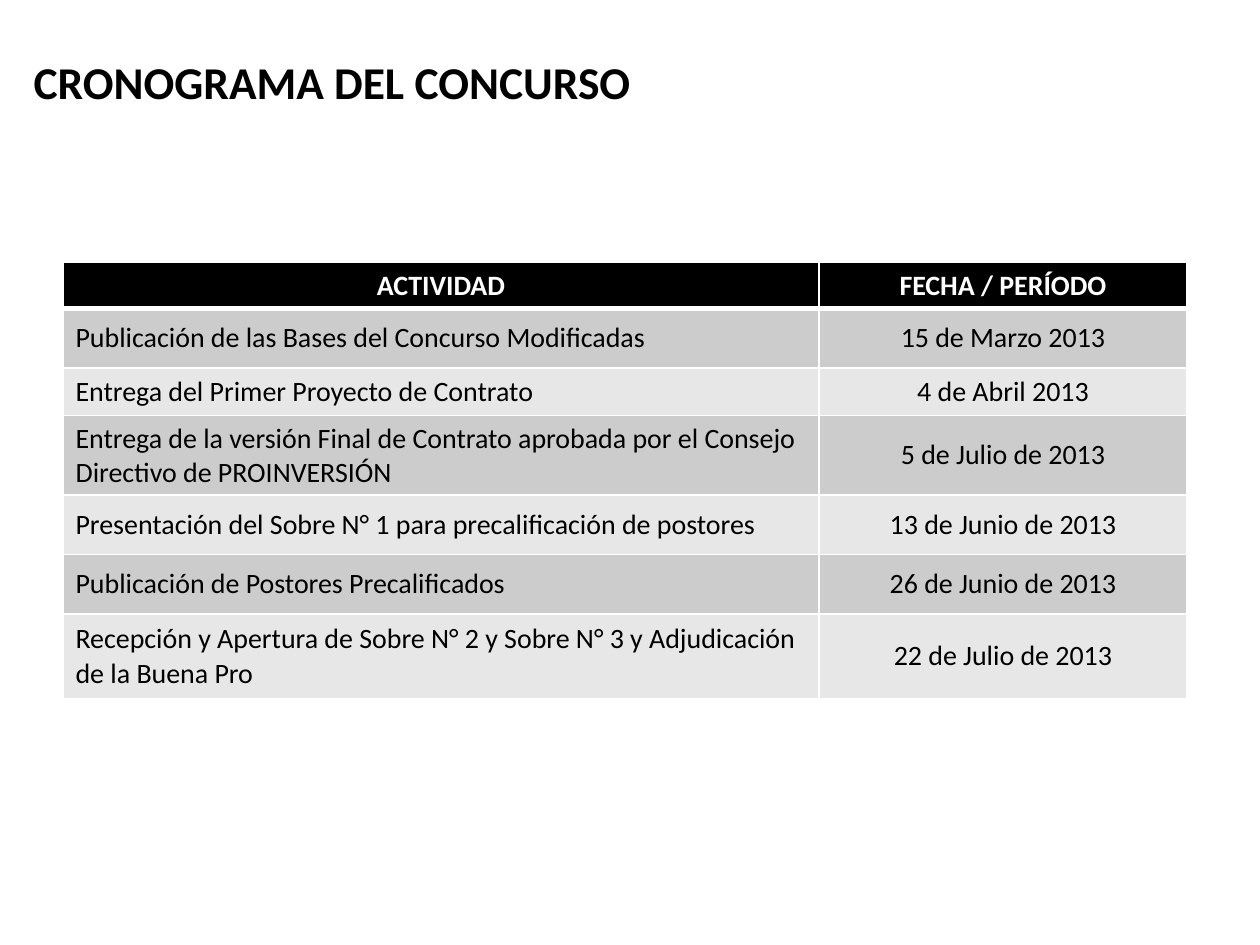
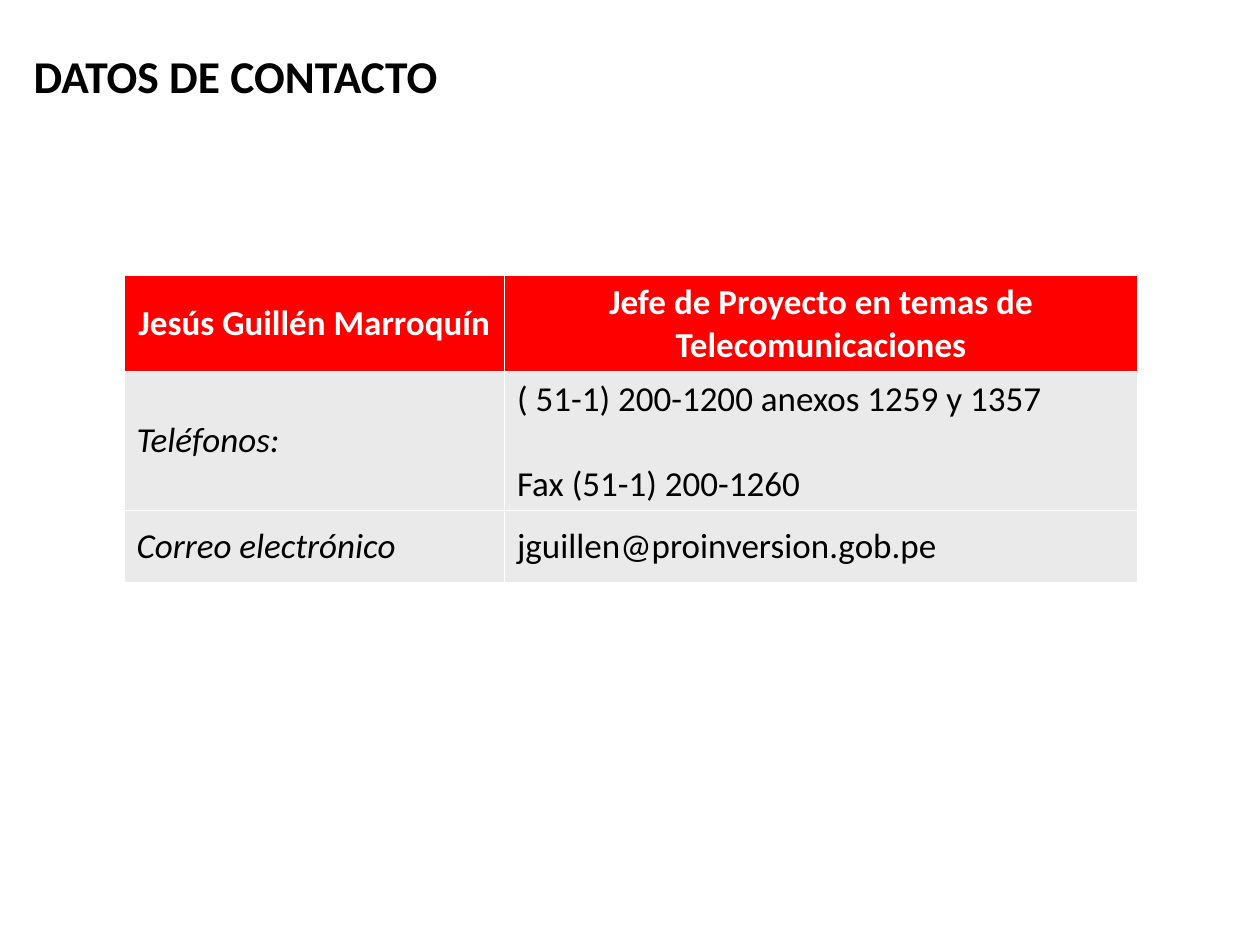
"""Build the contest schedule slide and the contact details slide."""
from dataclasses import dataclass

from lxml.etree import SubElement
from pptx import Presentation
from pptx.dml.color import RGBColor as Color
from pptx.enum.text import MSO_ANCHOR as Anchor, MSO_AUTO_SIZE as AutoSize, PP_ALIGN as Align
from pptx.oxml.ns import qn
from pptx.util import Cm, Pt


@dataclass(frozen=True)
class Theme:
    font: str = "Calibri"
    black: str = "000000"
    white: str = "FFFFFF"
    red: str = "FF0000"
    dark_band: str = "CCCCCC"
    light_band: str = "E7E7E7"
    contact_band: str = "EAEAEA"
    title_size: int = 26
    schedule_size: int = 16
    contact_size: int = 20
    rule: int = 1
    heavy_rule: int = 3


theme = Theme()


def write_text(frame, text, size, color=theme.black, bold=False, italic=False,
               align=Align.LEFT, gap=0):
    frame.word_wrap = True
    for index, line in enumerate(text.split("\n")):
        paragraph = frame.add_paragraph() if index else frame.paragraphs[0]
        paragraph.alignment = align
        if index:
            paragraph.space_before = Pt(gap)
        run = paragraph.add_run()
        run.text = line
        run.font.name = theme.font
        run.font.size = Pt(size)
        run.font.bold = bold
        run.font.italic = italic
        run.font.color.rgb = Color.from_string(color)


def draw_borders(cell, bottom_width):
    properties = cell._tc.get_or_add_tcPr()
    for side in ("lnL", "lnR", "lnT", "lnB"):
        width = bottom_width if side == "lnB" else theme.rule
        line = SubElement(properties, qn(f"a:{side}"), w=str(Pt(width)))
        fill = SubElement(line, qn("a:solidFill"))
        SubElement(fill, qn("a:srgbClr"), val=theme.white)


schedule = dict(
    title="CRONOGRAMA DEL CONCURSO", title_top=0.97,
    left=1.27, top=5.29, columns=(15.24, 7.42),
    heights=(0.91, 1.2, 0.95, 1.6, 1.2, 1.2, 1.7),
    size=theme.schedule_size, header=theme.black, header_rule=theme.heavy_rule,
    bands=(theme.dark_band, theme.light_band),
    value_align=Align.CENTER, italic_labels=False,
    rows=(
        ("ACTIVIDAD", "FECHA / PERÍODO"),
        ("Publicación de las Bases del Concurso Modificadas", "15 de Marzo 2013"),
        ("Entrega del Primer Proyecto de Contrato", "4 de Abril 2013"),
        ("Entrega de la versión Final de Contrato aprobada por el Consejo "
         "Directivo de PROINVERSIÓN", "5 de Julio de 2013"),
        ("Presentación del Sobre N° 1 para precalificación de postores",
         "13 de Junio de 2013"),
        ("Publicación de Postores Precalificados", "26 de Junio de 2013"),
        ("Recepción y Apertura de Sobre N° 2 y Sobre N° 3 y Adjudicación "
         "de la Buena Pro", "22 de Julio de 2013"),
    ),
)
contact = dict(
    title="DATOS DE CONTACTO", title_top=0.84,
    left=2.5, top=5.54, columns=(7.67, 12.76), heights=(1.94, 2.8, 1.45),
    size=theme.contact_size, header=theme.red, header_rule=theme.rule,
    bands=(theme.contact_band,),
    value_align=Align.LEFT, italic_labels=True,
    rows=(
        ("Jesús Guillén Marroquín", "Jefe de Proyecto en temas de Telecomunicaciones"),
        ("Teléfonos:", "( 51-1) 200-1200 anexos 1259 y 1357\nFax (51-1) 200-1260"),
        ("Correo electrónico", "jguillen@proinversion.gob.pe"),
    ),
)

presentation = Presentation()
presentation.slide_width = Cm(25.4)
presentation.slide_height = Cm(19.05)

for page in (schedule, contact):
    slide = presentation.slides.add_slide(presentation.slide_layouts[6])
    title = slide.shapes.add_textbox(Cm(0.43), Cm(page["title_top"]), Cm(15.67), Cm(1.37))
    write_text(title.text_frame, page["title"], theme.title_size, bold=True)
    title.text_frame.auto_size = AutoSize.SHAPE_TO_FIT_TEXT

    rows, columns, heights = page["rows"], page["columns"], page["heights"]
    table = slide.shapes.add_table(
        len(rows), len(columns), Cm(page["left"]), Cm(page["top"]),
        Cm(sum(columns)), Cm(sum(heights))).table
    table.horz_banding = False
    for column, width in zip(table.columns, columns):
        column.width = Cm(width)
    for row_index, texts in enumerate(rows):
        table.rows[row_index].height = Cm(heights[row_index])
        is_header = row_index == 0
        bands = page["bands"]
        fill = page["header"] if is_header else bands[(row_index - 1) % len(bands)]
        for column_index, text in enumerate(texts):
            is_label = column_index == 0
            body_align = Align.LEFT if is_label else page["value_align"]
            cell = table.cell(row_index, column_index)
            draw_borders(cell, page["header_rule"] if is_header else theme.rule)
            cell.fill.solid()
            cell.fill.fore_color.rgb = Color.from_string(fill)
            cell.vertical_anchor = Anchor.MIDDLE
            write_text(cell.text_frame, text, page["size"],
                       color=theme.white if is_header else theme.black,
                       bold=is_header,
                       italic=page["italic_labels"] and is_label and not is_header,
                       align=Align.CENTER if is_header else body_align,
                       gap=24)

presentation.save("out.pptx")
